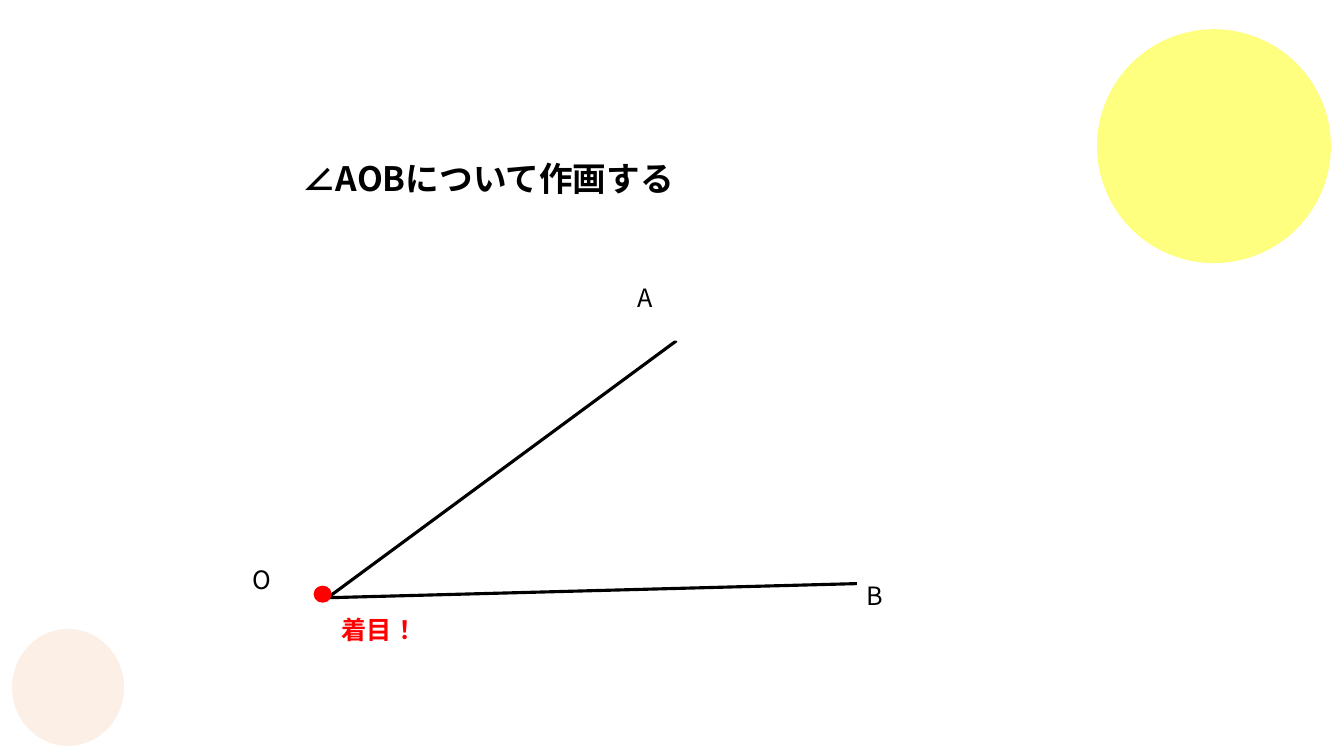
import dataclasses

import pptx
import pptx.dml.color
import pptx.enum.lang
import pptx.enum.shapes
import pptx.enum.text
import pptx.oxml.ns
import pptx.util
from lxml import etree

Inches = pptx.util.Inches
RGBColor = pptx.dml.color.RGBColor
SHAPE = pptx.enum.shapes.MSO_SHAPE
qn = pptx.oxml.ns.qn

BLACK = RGBColor(0x00, 0x00, 0x00)
WHITE = RGBColor(0xFF, 0xFF, 0xFF)
RED = RGBColor(0xFF, 0x00, 0x00)
PEACH = RGBColor(0xF8, 0xCB, 0xAD)
YELLOW = RGBColor(0xFF, 0xFF, 0x00)
FONT = "Noto Sans CJK JP"


@dataclasses.dataclass
class Disc:
    left: float
    top: float
    width: float
    height: float
    color: RGBColor
    alpha: int = 100


@dataclasses.dataclass
class Label:
    text: str
    left: float
    top: float
    width: float
    height: float
    size: int = 18
    color: RGBColor = BLACK
    bold: bool = False


def add_solid(slide, kind, part: Disc | Label, color: RGBColor):
    shape = slide.shapes.add_shape(
        kind, Inches(part.left), Inches(part.top),
        Inches(part.width), Inches(part.height))
    shape.shadow.inherit = False
    shape.line.fill.background()
    shape.fill.solid()
    shape.fill.fore_color.rgb = color
    return shape


def add_disc(slide, disc: Disc) -> None:
    shape = add_solid(slide, SHAPE.OVAL, disc, disc.color)
    if disc.alpha < 100:
        color = shape.fill._xPr.find(qn("a:solidFill"))[0]
        etree.SubElement(color, qn("a:alpha"), val=str(disc.alpha * 1000))


def add_angle(slide, points: list[tuple[float, float]]) -> None:
    first, *rest = [(Inches(x), Inches(y)) for x, y in points]
    pen = slide.shapes.build_freeform(*first)
    pen.add_line_segments(rest, close=False)
    angle = pen.convert_to_shape()
    angle.shadow.inherit = False
    angle.fill.background()
    angle.line.color.rgb = BLACK
    angle.line.width = pptx.util.Pt(2.25)


def write(shape, label: Label) -> None:
    frame = shape.text_frame
    frame.word_wrap = True
    frame.vertical_anchor = pptx.enum.text.MSO_ANCHOR.TOP
    para = frame.paragraphs[0]
    para.alignment = pptx.enum.text.PP_ALIGN.LEFT
    run = para.add_run()
    run.text = label.text
    font = run.font
    font.name = FONT
    font.size = pptx.util.Pt(label.size)
    font.bold = label.bold
    font.color.rgb = label.color
    font.language_id = pptx.enum.lang.MSO_LANGUAGE_ID.JAPANESE
    # East Asian glyphs take their own font entry
    etree.SubElement(font._element, qn("a:ea"), typeface=FONT)


def add_text(slide, label: Label) -> None:
    box = slide.shapes.add_textbox(
        Inches(label.left), Inches(label.top),
        Inches(label.width), Inches(label.height))
    write(box, label)


# Background circles
DECOR = [
    Disc(0.12, 6.24, 1.11, 1.16, PEACH, 30),
    Disc(10.88, 0.29, 2.32, 2.32, YELLOW, 50),
]

# Angle AOB, with a dot at its vertex
ANGLE = [(6.71, 3.38), (3.25, 5.93), (8.5, 5.79)]
DOT = Disc(3.11, 5.81, 0.18, 0.17, RED)

# Point names on white plates
POINTS = [
    Label("A", 6.22, 2.75, 0.62, 0.63),
    Label("B", 8.5, 5.71, 0.62, 0.63),
    Label("O", 2.41, 5.55, 0.62, 0.63),
]

# Callout and heading
CALLOUT = Label("着目！", 3.29, 6.05, 1.29, 0.4, color=RED, bold=True)
HEADING = Label("∠AOBについて作画する", 2.9, 1.52, 4.55, 0.5, size=24, bold=True)


def main() -> None:
    deck = pptx.Presentation()
    deck.slide_width = Inches(13.33)
    deck.slide_height = Inches(7.5)
    slide = deck.slides.add_slide(deck.slide_layouts[6])
    add_text(slide, CALLOUT)
    for disc in DECOR:
        add_disc(slide, disc)
    add_angle(slide, ANGLE)
    for point in POINTS:
        write(add_solid(slide, SHAPE.RECTANGLE, point, WHITE), point)
    add_text(slide, HEADING)
    add_disc(slide, DOT)
    deck.save("out.pptx")


if __name__ == "__main__":
    main()
